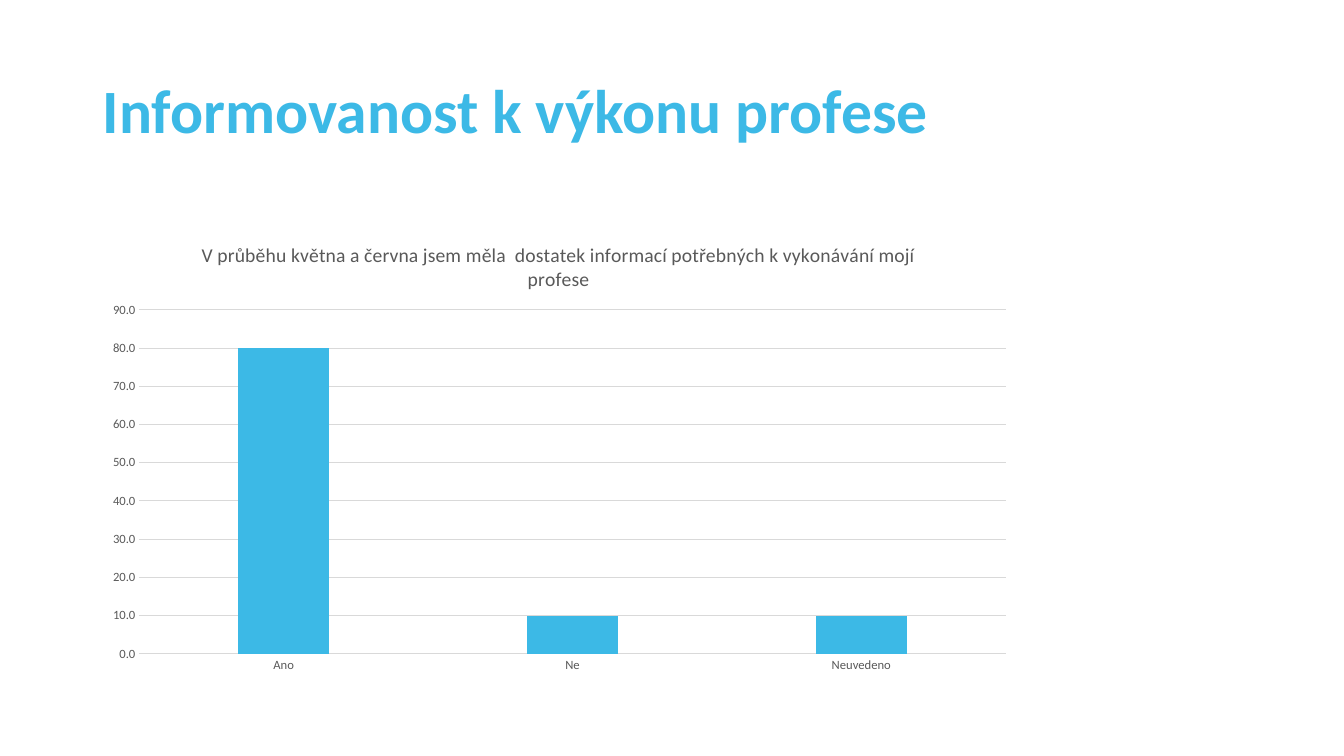
from lxml.etree import SubElement
from pptx import Presentation
from pptx.chart.data import CategoryChartData
from pptx.dml.color import RGBColor
from pptx.enum.chart import XL_CHART_TYPE, XL_TICK_MARK
from pptx.enum.text import MSO_ANCHOR, MSO_AUTO_SIZE, PP_ALIGN
from pptx.oxml.ns import qn
from pptx.util import Inches, Pt

COLORS = {"accent": "3CB9E6", "label": "595959", "grid": "D9D9D9"}
ANSWERS = {"Ano": 80, "Ne": 10, "Neuvedeno": 10}
QUESTION = ("V průběhu května a června jsem měla  dostatek informací "
            "potřebných k vykonávání mojí profese")
PLOT_AREA = {"x": 0.05, "y": 0.19, "w": 0.93, "h": 0.75}


def color(name):
    return RGBColor.from_string(COLORS[name])


def set_all(target, values):
    for name, value in values.items():
        setattr(target, name, value)


class SlideBuilder:
    def __init__(self, deck, font_name):
        self.font_name = font_name
        self.page = deck.slides.add_slide(deck.slide_layouts[5])

    def style_font(self, font, size, color_name, bold=False):
        set_all(font, {"name": self.font_name, "size": Pt(size), "bold": bold})
        font.color.rgb = color(color_name)

    def style_line(self, line):
        line.color.rgb = color("grid")
        line.width = Pt(0.75)

    def title(self, text, left, top, width, height):
        box = self.page.shapes.title
        set_all(box, {"left": Inches(left), "top": Inches(top),
                      "width": Inches(width), "height": Inches(height)})
        frame = box.text_frame
        set_all(frame, {"text": text, "word_wrap": True,
                        "auto_size": MSO_AUTO_SIZE.NONE,
                        "vertical_anchor": MSO_ANCHOR.MIDDLE})
        para = frame.paragraphs[0]
        set_all(para, {"alignment": PP_ALIGN.LEFT, "line_spacing": 0.9})
        self.style_font(para.runs[0].font, 44, "accent", bold=True)

    def column_chart(self, heading, answers, left, top, width, height):
        data = CategoryChartData(number_format="###0.0")
        data.categories = list(answers)
        data.add_series("Series 1", list(answers.values()))
        chart = self.page.shapes.add_chart(
            XL_CHART_TYPE.COLUMN_CLUSTERED, Inches(left), Inches(top),
            Inches(width), Inches(height), data).chart
        self.style_font(chart.font, 10, "label")
        set_all(chart, {"has_legend": False, "has_title": True})

        frame = chart.chart_title.text_frame
        frame.text = heading
        self.style_font(frame.paragraphs[0].runs[0].font, 14, "label")
        chart.chart_title.include_in_layout = False

        plot = chart.plots[0]
        set_all(plot, {"gap_width": 219, "overlap": -27, "vary_by_categories": False})
        fill = plot.series[0].format.fill
        fill.solid()
        fill.fore_color.rgb = color("accent")

        for axis in (chart.category_axis, chart.value_axis):
            set_all(axis, {"major_tick_mark": XL_TICK_MARK.NONE,
                           "minor_tick_mark": XL_TICK_MARK.NONE})
            self.style_font(axis.tick_labels.font, 9, "label")
        self.style_line(chart.category_axis.format.line)
        values = chart.value_axis
        set_all(values, {"minimum_scale": 0, "maximum_scale": 90, "major_unit": 10,
                         "has_major_gridlines": True})
        set_all(values.tick_labels, {"number_format": "###0.0",
                                     "number_format_is_linked": False})
        values.format.line.fill.background()
        self.style_line(values.major_gridlines.format.line)
        self.place_plot(chart, PLOT_AREA)

    def place_plot(self, chart, area):
        """Fix the inner plot rectangle, in fractions of the chart's size."""
        plot_area = chart._chartSpace.chart.plotArea
        layout = plot_area.find(qn("c:layout"))
        if layout is None:
            layout = SubElement(plot_area, qn("c:layout"))
            plot_area.insert(0, layout)
        manual = SubElement(layout, qn("c:manualLayout"))
        settings = {"layoutTarget": "inner", "xMode": "edge", "yMode": "edge", **area}
        for tag, value in settings.items():
            SubElement(manual, qn(f"c:{tag}")).set("val", str(value))


def main():
    deck = Presentation()
    set_all(deck, {"slide_width": Inches(13.33), "slide_height": Inches(7.5)})
    builder = SlideBuilder(deck, "Calibri")
    builder.title("Informovanost k výkonu profese", 0.92, 0.4, 11.5, 1.45)
    builder.column_chart(QUESTION, ANSWERS, 0.92, 2.21, 9.24, 4.55)
    deck.save("out.pptx")


if __name__ == "__main__":
    main()
